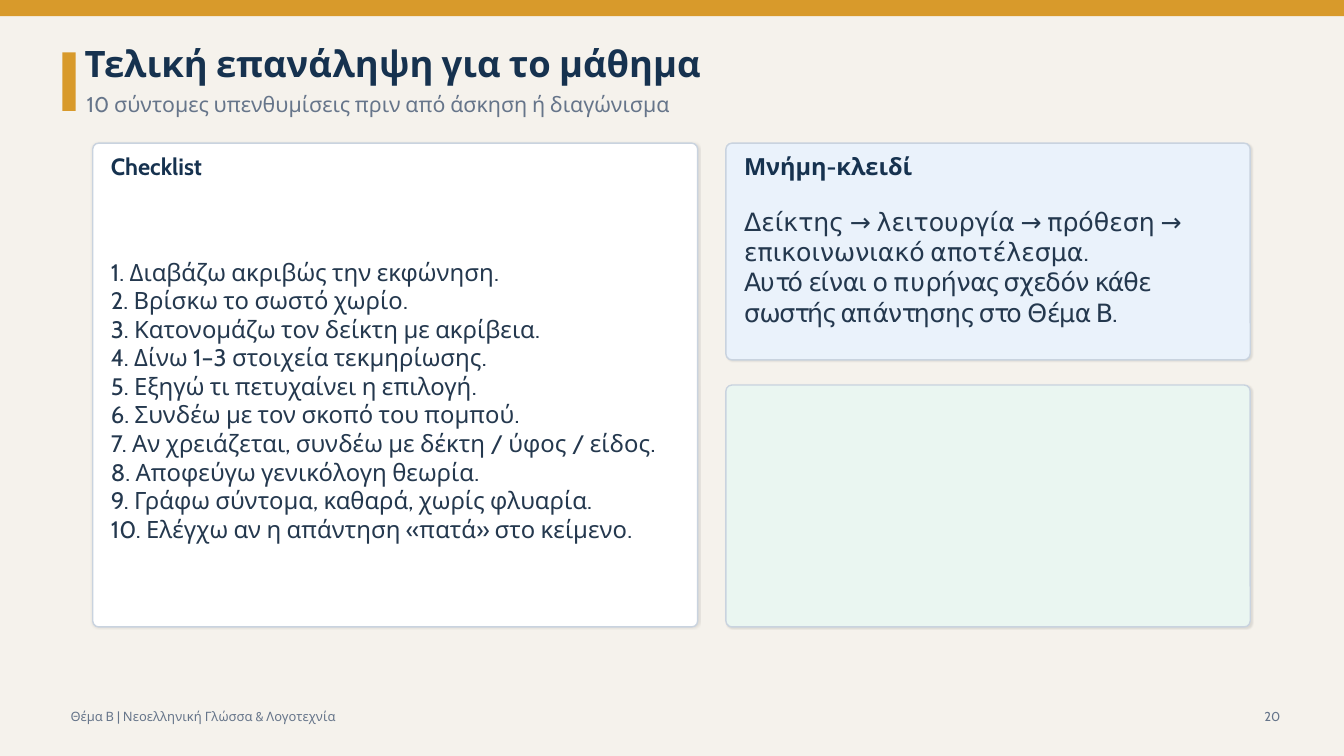
from lxml import etree
from pptx import Presentation
from pptx.dml.color import RGBColor
from pptx.enum.shapes import MSO_SHAPE
from pptx.enum.text import MSO_ANCHOR, MSO_AUTO_SIZE, PP_ALIGN
from pptx.oxml import parse_xml
from pptx.oxml.ns import nsdecls, qn
from pptx.util import Inches, Pt

RECTANGLE, ROUNDED = MSO_SHAPE.RECTANGLE, MSO_SHAPE.ROUNDED_RECTANGLE
MIDDLE, NO_AUTOFIT = MSO_ANCHOR.MIDDLE, MSO_AUTO_SIZE.NONE
LEFT, RIGHT = PP_ALIGN.LEFT, PP_ALIGN.RIGHT
TITLE_AND_CONTENT = 1

FONT = "Cabin"
COLOURS = {
    "paper": "F5F2EC", "amber": "D89A2B", "navy": "16324F", "ink": "24384E",
    "muted": "66758A", "border": "C9D3DF", "white": "FFFFFF",
    "sky": "EAF2FB", "mint": "EAF6F1",
}
CARD_SHADOW = (
    f'<a:effectLst {nsdecls("a")}><a:outerShdw blurRad="{Pt(1.2)}" dist="{Pt(0.5)}" '
    'dir="2700000" algn="ctr" rotWithShape="0"><a:srgbClr val="000000">'
    '<a:alpha val="10000"/></a:srgbClr></a:outerShdw></a:effectLst>'
)

CHECKLIST = [
    "Διαβάζω ακριβώς την εκφώνηση.",
    "Βρίσκω το σωστό χωρίο.",
    "Κατονομάζω τον δείκτη με ακρίβεια.",
    "Δίνω 1–3 στοιχεία τεκμηρίωσης.",
    "Εξηγώ τι πετυχαίνει η επιλογή.",
    "Συνδέω με τον σκοπό του πομπού.",
    "Αν χρειάζεται, συνδέω με δέκτη / ύφος / είδος.",
    "Αποφεύγω γενικόλογη θεωρία.",
    "Γράφω σύντομα, καθαρά, χωρίς φλυαρία.",
    "Ελέγχω αν η απάντηση «πατά» στο κείμενο.",
]
KEY_MEMORY = [
    "Δείκτης → λειτουργία → πρόθεση → επικοινωνιακό αποτέλεσμα.",
    "Αυτό είναι ο πυρήνας σχεδόν κάθε σωστής απάντησης στο Θέμα Β.",
]


def colour(name):
    """Return a palette colour by name."""
    return RGBColor.from_string(COLOURS[name])


def write(box, *lines, size, color="ink", bold=False, align=LEFT):
    """Fill a box with one plain, unindented paragraph per line."""
    frame = box.text_frame
    frame.word_wrap = True
    frame.auto_size = NO_AUTOFIT
    frame.vertical_anchor = MIDDLE
    frame.margin_left = frame.margin_top = frame.margin_right = frame.margin_bottom = 0
    for index, line in enumerate(lines):
        para = frame.add_paragraph() if index else frame.paragraphs[0]
        properties = para._p.get_or_add_pPr()
        properties.set("marL", "0")
        properties.set("indent", "0")
        etree.SubElement(properties, qn("a:buNone"))
        para.alignment = align
        para.space_before = Pt(0)
        span = para.add_run()
        span.text = line
        span.font.name = FONT
        span.font.size = Pt(size)
        span.font.bold = bold
        span.font.color.rgb = colour(color)


class ReviewSlide:
    """Draw the review slide's elements in one shared style."""

    def __init__(self, deck):
        """Add a page with the paper background."""
        self.page = deck.slides.add_slide(deck.slide_layouts[TITLE_AND_CONTENT])
        self.page.background.fill.solid()
        self.page.background.fill.fore_color.rgb = colour("paper")

    def shape(self, kind, left, top, width, height, fill):
        """Add a filled shape without outline or shadow."""
        box = self.page.shapes.add_shape(
            kind, Inches(left), Inches(top), Inches(width), Inches(height))
        box.shadow.inherit = False
        box.fill.solid()
        box.fill.fore_color.rgb = colour(fill)
        box.line.fill.background()
        return box

    def text(self, left, top, width, height, *lines, **style):
        """Add a text box."""
        box = self.page.shapes.add_textbox(
            Inches(left), Inches(top), Inches(width), Inches(height))
        write(box, *lines, **style)

    def placeholder(self, index, left, top, width, height, *lines, **style):
        """Place, fill and bring forward a template placeholder."""
        box = self.page.placeholders[index]
        box.left, box.top = Inches(left), Inches(top)
        box.width, box.height = Inches(width), Inches(height)
        write(box, *lines, **style)
        box.element.getparent().append(box.element)

    def card(self, left, top, width, height, fill, heading=None):
        """Add a rounded card and return the area left for its content."""
        box = self.shape(ROUNDED, left, top, width, height, fill)
        box.adjustments[0] = 0.06 / min(width, height)
        box.line.color.rgb = colour("border")
        box.line.width = Pt(1)
        properties = box.element.spPr
        properties.replace(properties.find(qn("a:effectLst")), parse_xml(CARD_SHADOW))
        inner_left, inner_width = left + 0.18, width - 0.36
        if heading:
            self.text(inner_left, top + 0.12, inner_width, 0.22, heading,
                      size=16.8, color="navy", bold=True)
        return inner_left, top + 0.42, inner_width, height - 0.54


def main():
    """Build and save the deck."""
    deck = Presentation()
    deck.slide_width, deck.slide_height = Inches(13.33), Inches(7.5)
    slide = ReviewSlide(deck)

    slide.shape(RECTANGLE, 0, 0, 13.33, 0.16, "amber")
    slide.shape(RECTANGLE, 0.62, 0.52, 0.13, 0.58, "amber")
    slide.placeholder(0, 0.84, 0.42, 9.6, 0.4, "Τελική επανάληψη για το μάθημα",
                      size=26, color="navy", bold=True)
    slide.text(0.86, 0.92, 10.8, 0.22,
               "10 σύντομες υπενθυμίσεις πριν από άσκηση ή διαγώνισμα",
               size=15.2, color="muted")

    steps = [f"{number}. {step}" for number, step in enumerate(CHECKLIST, 1)]
    checklist_area = slide.card(0.92, 1.42, 6, 4.8, "white", "Checklist")
    slide.placeholder(1, *checklist_area, *steps, size=17)
    memory_area = slide.card(7.2, 1.42, 5.2, 2.15, "sky", "Μνήμη-κλειδί")
    slide.text(*memory_area, *KEY_MEMORY, size=18)
    slide.card(7.2, 3.82, 5.2, 2.4, "mint")

    slide.text(0.7, 7.01, 4.9, 0.2, "Θέμα Β | Νεοελληνική Γλώσσα & Λογοτεχνία",
               size=9.2, color="muted")
    slide.text(12.3, 7.01, 0.4, 0.2, "20", size=9.2, color="muted", align=RIGHT)
    deck.save("out.pptx")


if __name__ == "__main__":
    main()
